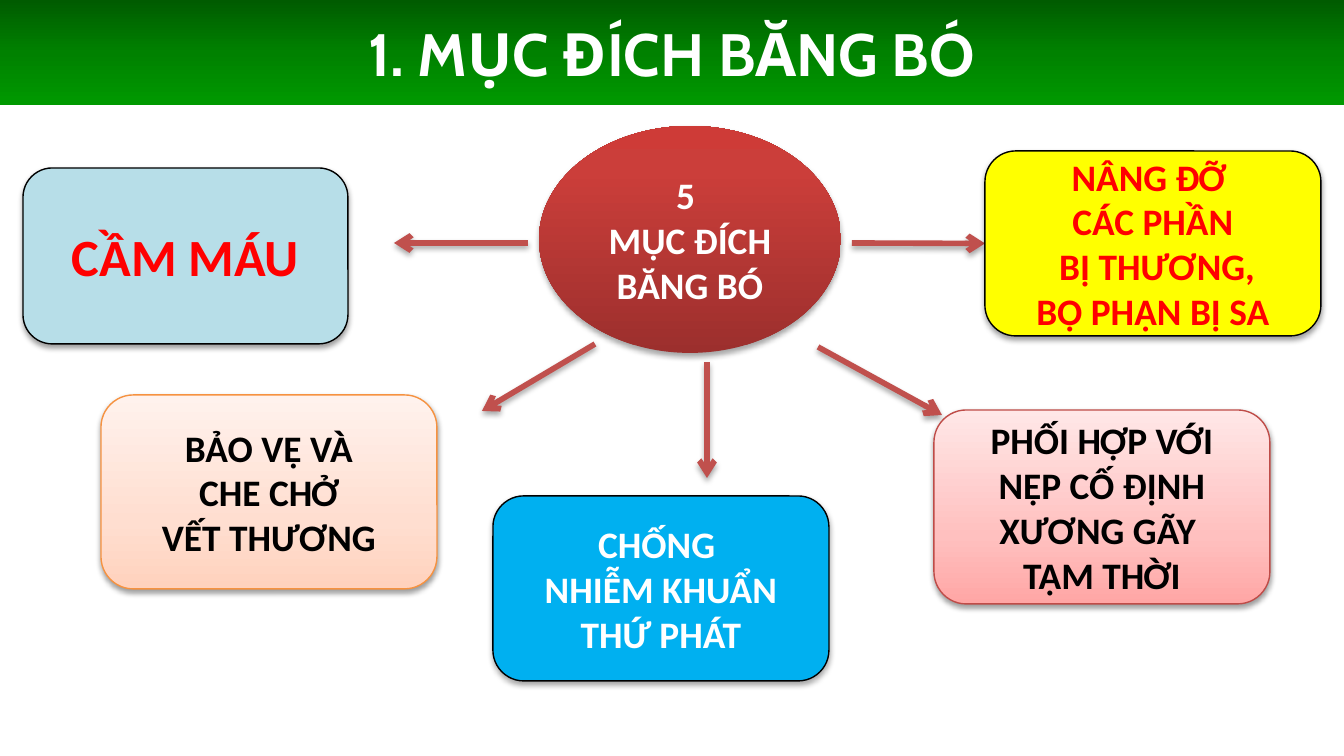
from dataclasses import dataclass
from typing import Optional

from lxml.etree import SubElement
from pptx import Presentation
from pptx.dml.color import RGBColor as RGB
from pptx.enum.shapes import MSO_CONNECTOR as CONN, MSO_SHAPE as SHAPE
from pptx.enum.text import MSO_ANCHOR as ANCHOR, PP_ALIGN as ALIGN
from pptx.oxml.ns import qn
from pptx.util import Emu, Pt

PX = 914400 / 134.4  # EMU in one px
UP, DOWN = 90, 270   # gradient directions

COLORS = {
    "white": "FFFFFF", "black": "000000", "red": "FF0000",
    "arrow": "C0504D", "pale blue": "B7DEE8", "yellow": "FFFF00",
    "blue": "00B0F0", "orange line": "F69240", "rose line": "BF4C48",
}
GRADIENTS = {
    "hub": ((0, "9C2F2D"), (80, "CB3E3A"), (100, "CE3B37")),
    "peach": ((0, "FFD2BD"), (35, "FFDED0"), (100, "FFF2ED")),
    "rose": ((0, "FFA6A5"), (35, "FFC0BF"), (100, "FFE7E7")),
    "title": ((0, "005B00"), (50, "008100"), (100, "009900")),
}


@dataclass
class Block:
    x: int
    y: int
    w: int
    h: int
    lines: tuple[str, ...]
    fill: str
    color: str
    line: Optional[str] = "black"
    size: int = 20
    font: str = "Calibri"
    shape: SHAPE = SHAPE.ROUNDED_RECTANGLE
    angle: int = UP
    shadow: Optional[tuple[int, float]] = (38, 1.6)  # opacity %, distance pt


@dataclass
class Arrow:
    x1: int
    y1: int
    x2: int
    y2: int


def px(n: int) -> Emu:
    return Emu(round(n * PX))


def rgb(name: str) -> RGB:
    return RGB.from_string(COLORS[name])


def add_shadow(effects, opacity: int, dist: float) -> None:
    outer = SubElement(effects, qn("a:outerShdw"), blurRad=str(Pt(3.1)),
                       dist=str(Pt(dist)), dir="5400000", rotWithShape="0")
    clr = SubElement(outer, qn("a:srgbClr"), val=COLORS["black"])
    SubElement(clr, qn("a:alpha"), val=str(opacity * 1000))


def set_fill(sp, name: str, angle: int) -> None:
    if name in COLORS:
        sp.fill.solid()
        sp.fill.fore_color.rgb = rgb(name)
        return
    sp.fill.gradient()
    sp.fill.gradient_angle = angle
    stops = sp.element.spPr.find(qn("a:gradFill")).find(qn("a:gsLst"))
    for old in list(stops):
        stops.remove(old)
    for pos, color in GRADIENTS[name]:
        stop = SubElement(stops, qn("a:gs"), pos=str(pos * 1000))
        SubElement(stop, qn("a:srgbClr"), val=color)


def add_block(s, b: Block):
    sp = s.shapes.add_shape(b.shape, px(b.x), px(b.y), px(b.w), px(b.h))
    set_fill(sp, b.fill, b.angle)
    if b.line:
        sp.line.color.rgb = rgb(b.line)
        sp.line.width = Pt(0.75)
    else:
        sp.line.fill.background()
    sp.shadow.inherit = False
    if b.shadow:
        add_shadow(sp.element.spPr.find(qn("a:effectLst")), *b.shadow)

    tf = sp.text_frame
    tf.word_wrap = True
    tf.vertical_anchor = ANCHOR.MIDDLE
    for i, line in enumerate(b.lines):
        p = tf.add_paragraph() if i else tf.paragraphs[0]
        p.alignment = ALIGN.CENTER
        r = p.add_run()
        r.text = line
        r.font.name, r.font.size, r.font.bold = b.font, Pt(b.size), True
        r.font.color.rgb = rgb(b.color)
    return sp


def add_arrow(s, a: Arrow):
    c = s.shapes.add_connector(CONN.STRAIGHT, px(a.x1), px(a.y1), px(a.x2), px(a.y2))
    c.line.color.rgb = rgb("arrow")
    c.line.width = Pt(3)
    SubElement(c.line._get_or_add_ln(), qn("a:tailEnd"), type="arrow")
    add_shadow(SubElement(c.element.spPr, qn("a:effectLst")), 35, 1.8)
    return c


TITLE = Block(0, 0, 1344, 105, ("1. MỤC ĐÍCH BĂNG BÓ",), "title", "white", None,
              32, "Cabin", SHAPE.RECTANGLE, DOWN, None)
HUB = Block(539, 126, 302, 227, ("5 ", "MỤC ĐÍCH", "BĂNG BÓ"), "hub", "white", None,
            shape=SHAPE.OVAL, shadow=(35, 1.8))
SUPPORT = Block(985, 151, 336, 185,
                ("NÂNG ĐỠ ", "CÁC PHẦN", " BỊ THƯƠNG,", "BỘ PHẬN BỊ SA"),
                "yellow", "red")
PURPOSES = (
    Block(23, 168, 325, 176, ("CẦM MÁU",), "pale blue", "red", size=28),
    Block(101, 395, 336, 194, ("BẢO VỆ VÀ", " CHE CHỞ ", "VẾT THƯƠNG"),
          "peach", "black", "orange line"),
    Block(934, 410, 336, 194, ("PHỐI HỢP VỚI NẸP CỐ ĐỊNH XƯƠNG GÃY ", "TẠM THỜI"),
          "rose", "black", "rose line"),
    Block(493, 496, 336, 185, ("CHỐNG ", "NHIỄM KHUẨN THỨ PHÁT"),
          "blue", "white", shadow=(35, 1.8)),
)
ARROWS = (
    Arrow(528, 243, 394, 243),
    Arrow(707, 362, 707, 478),
    Arrow(818, 347, 942, 415),
    Arrow(595, 344, 482, 411),
)
SUPPORT_ARROW = Arrow(852, 243, 985, 243)


def main() -> None:
    prs = Presentation()
    prs.slide_width, prs.slide_height = px(1344), px(756)
    s = prs.slides.add_slide(prs.slide_layouts[6])

    # Hub and its arrows
    add_block(s, HUB)
    for arrow in ARROWS:
        add_arrow(s, arrow)
    support_arrow = add_arrow(s, SUPPORT_ARROW)

    # Purposes around the hub
    for block in PURPOSES:
        add_block(s, block)
    support_arrow.end_connect(add_block(s, SUPPORT), 1)

    # Title band
    add_block(s, TITLE)
    prs.save("out.pptx")


if __name__ == "__main__":
    main()
